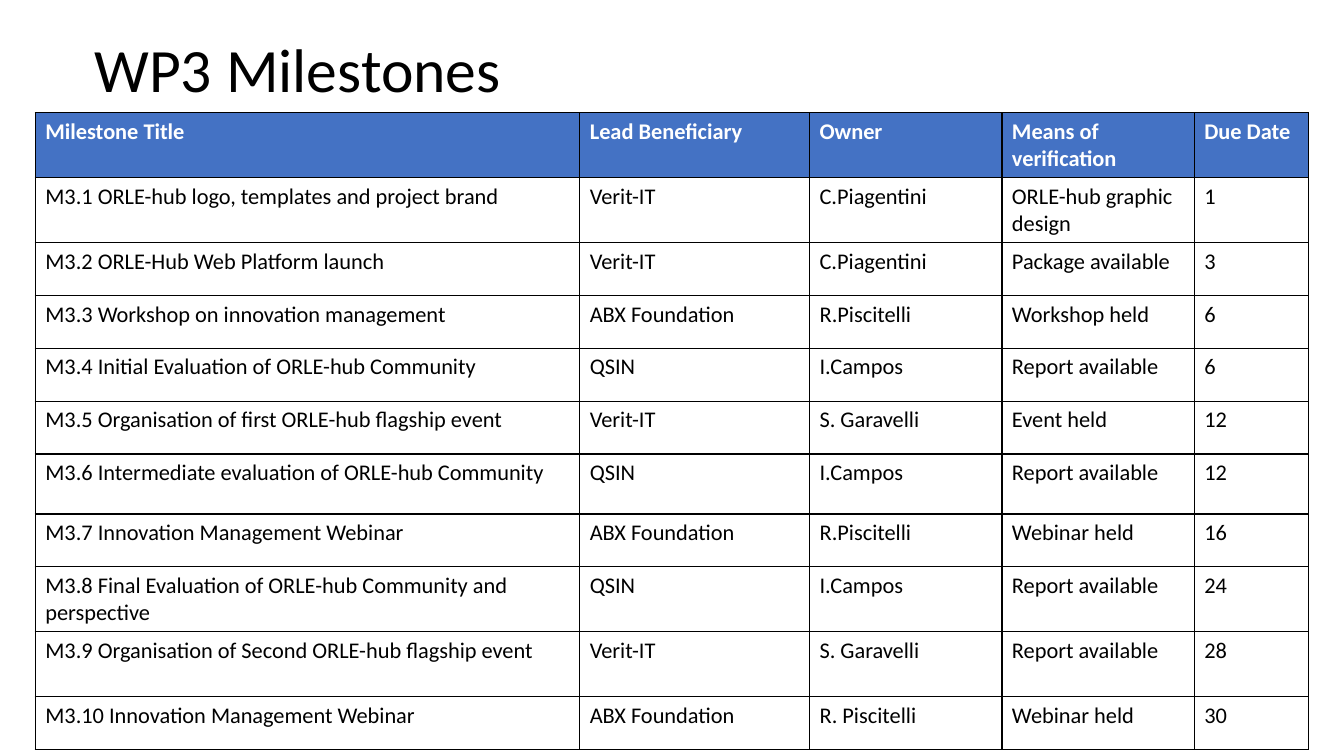
import pptx
import pptx.dml.color
import pptx.enum.text
import pptx.oxml
import pptx.oxml.ns
import pptx.util
from pptx.util import Cm

FONT = "Calibri"
BLACK, WHITE, BLUE = "000000", "FFFFFF", "4472C4"

HEADS = ["Milestone Title", "Lead Beneficiary", "Owner",
         "Means of verification", "Due Date"]
STONES = [
    ["M3.1 ORLE-hub logo, templates and project brand", "Verit-IT",
     "C.Piagentini", "ORLE-hub graphic design", "1"],
    ["M3.2 ORLE-Hub Web Platform launch", "Verit-IT",
     "C.Piagentini", "Package available", "3"],
    ["M3.3 Workshop on innovation management", "ABX Foundation",
     "R.Piscitelli", "Workshop held", "6"],
    ["M3.4 Initial Evaluation of ORLE-hub Community", "QSIN",
     "I.Campos", "Report available", "6"],
    ["M3.5 Organisation of first ORLE-hub flagship event", "Verit-IT",
     "S. Garavelli", "Event held", "12"],
    ["M3.6 Intermediate evaluation of ORLE-hub Community", "QSIN",
     "I.Campos", "Report available", "12"],
    ["M3.7 Innovation Management Webinar", "ABX Foundation",
     "R.Piscitelli", "Webinar held", "16"],
    ["M3.8 Final Evaluation of ORLE-hub Community and perspective", "QSIN",
     "I.Campos", "Report available", "24"],
    ["M3.9 Organisation of Second ORLE-hub flagship event", "Verit-IT",
     "S. Garavelli", "Report available", "28"],
    ["M3.10 Innovation Management Webinar", "ABX Foundation",
     "R. Piscitelli", "Webinar held", "30"],
]

# Column widths and row heights in cm
WIDTHS = [13.72, 5.79, 4.85, 4.85, 2.87]
LOW, MID, TALL = 1.33, 1.51, 1.64
HEIGHTS = [TALL, TALL, LOW, LOW, LOW, LOW, MID, LOW, TALL, TALL, LOW]


def paint(color, code):
    color.rgb = pptx.dml.color.RGBColor.from_string(code)


def add_run(para, text, size, code, bold=False):
    run = para.add_run()
    run.text = text
    run.font.name = FONT
    run.font.size = pptx.util.Pt(size)
    run.font.bold = bold
    paint(run.font.color, code)


def add_title(slide, text):
    box = slide.shapes.add_textbox(Cm(2.13), Cm(0), Cm(29.21), Cm(3.68))
    frame = box.text_frame
    frame.word_wrap = True
    frame.vertical_anchor = pptx.enum.text.MSO_ANCHOR.MIDDLE
    para = frame.paragraphs[0]
    para.line_spacing = 0.9
    add_run(para, text, 44, BLACK)


def add_edges(cell):
    # Borders come before the fill in the cell properties
    props = cell._tc.get_or_add_tcPr()
    for spot, side in enumerate(["lnL", "lnR", "lnT", "lnB"]):
        props.insert(spot, pptx.oxml.parse_xml(
            f'<a:{side} {pptx.oxml.ns.nsdecls("a")} w="12700"><a:solidFill>'
            f'<a:srgbClr val="{BLACK}"/></a:solidFill></a:{side}>'))


def fill_cell(cell, text, head):
    if head:
        cell.fill.solid()
        paint(cell.fill.fore_color, BLUE)
    else:
        cell.fill.background()
    add_edges(cell)
    add_run(cell.text_frame.paragraphs[0], text, 16,
            WHITE if head else BLACK, head)


def add_grid(slide, rows):
    frame = slide.shapes.add_table(len(rows), len(WIDTHS), Cm(0.89), Cm(2.84),
                                   Cm(sum(WIDTHS)), Cm(sum(HEIGHTS)))
    table = frame.table
    table.horz_banding = False
    for col, width in zip(table.columns, WIDTHS):
        col.width = Cm(width)
    for row, high in zip(table.rows, HEIGHTS):
        row.height = Cm(high)
    for r, texts in enumerate(rows):
        for c, text in enumerate(texts):
            fill_cell(table.cell(r, c), text, r == 0)


def main():
    deck = pptx.Presentation()
    deck.slide_width, deck.slide_height = Cm(33.87), Cm(19.05)
    slide = deck.slides.add_slide(deck.slide_layouts[6])

    # Title above the milestone table
    add_title(slide, "WP3 Milestones")
    add_grid(slide, [HEADS] + STONES)

    deck.save("out.pptx")


if __name__ == "__main__":
    main()
